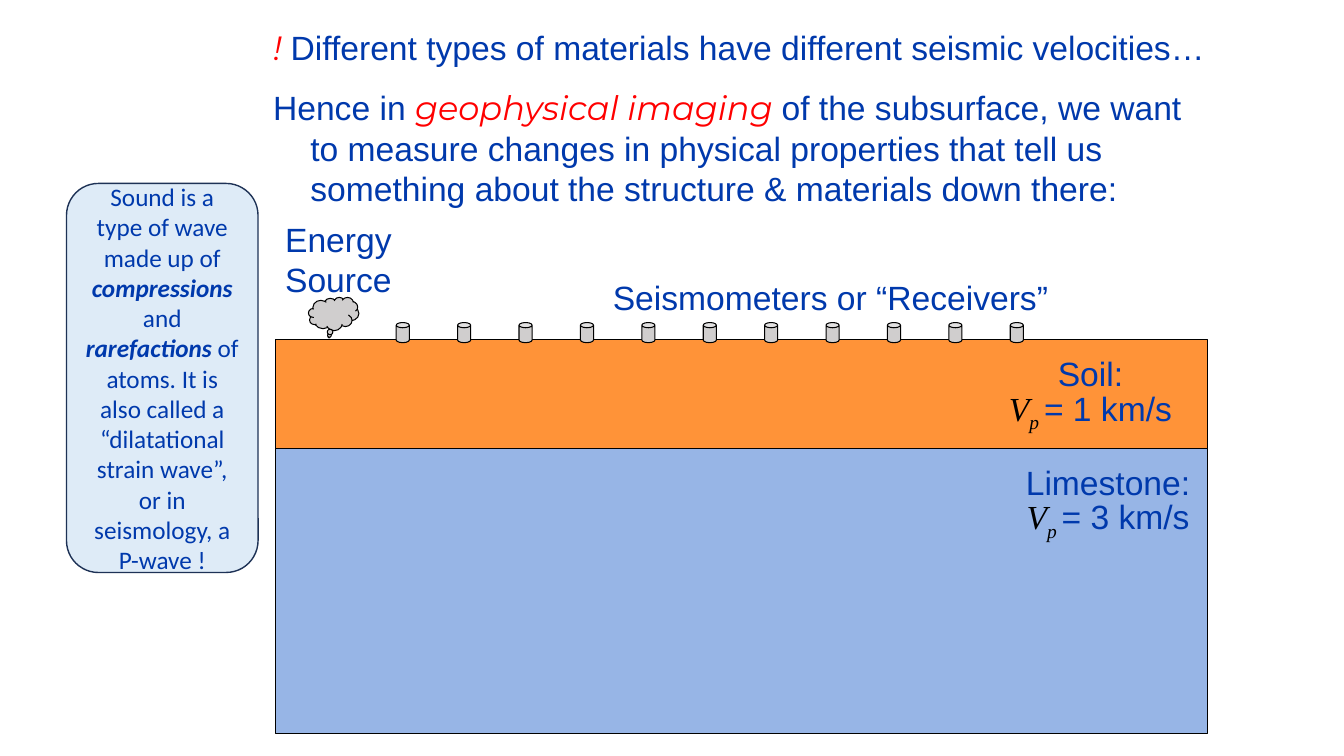
from pptx import Presentation
from pptx import util as u
from pptx.dml.color import RGBColor
from pptx.enum import shapes, text

NAVY = RGBColor(0x00, 0x39, 0xAC)
RED = RGBColor(0xFF, 0x00, 0x00)
BLACK = RGBColor(0x00, 0x00, 0x00)
ORANGE = RGBColor(0xFF, 0x93, 0x38)
BLUE = RGBColor(0x97, 0xB5, 0xE6)
GREY = RGBColor(0xD0, 0xCE, 0xCE)
PALE = RGBColor(0xDE, 0xEB, 0xF7)
EDGE = RGBColor(0x1E, 0x32, 0x56)

STYLES = {
    "plain": dict(name="Arial", size=24, color=NAVY),
    "stress": dict(name="Montserrat", size=24, color=RED, italic=True),
    "symbol": dict(name="Times New Roman", size=24, color=BLACK, italic=True),
    "sub": dict(name="Times New Roman", size=24, color=BLACK, italic=True, baseline=-25000),
    "note": dict(name="Calibri", size=18, color=NAVY),
    "term": dict(name="Calibri", size=18, color=NAVY, bold=True, italic=True),
}

INTRO = [
    [("! ", "stress"),
     ("Different types of materials have different seismic velocities…", "plain")],
    [("Hence in ", "plain"), ("geophysical imaging ", "stress"),
     ("of the subsurface, we want", "plain")],
    [("to measure changes in physical properties that tell us", "plain")],
    [("something about the structure & materials down there:", "plain")],
]
SOURCE = [[("Energy", "plain")], [("Source", "plain")]]
RECEIVERS = [[("Seismometers or “Receivers”", "plain")]]
NOTE = [[
    ("Sound is a type of wave made up of ", "note"), ("compressions", "term"),
    (" and ", "note"), ("rarefactions ", "term"),
    ("of atoms. It is also called a “dilatational strain wave”, "
     "or in seismology, a P-wave !", "note"),
]]
LAYERS = [
    ("Soil:", "= 1 km/s", ORANGE, 3.37, 1.08, (9.87, 3.45, 1.89, 0.91)),
    ("Limestone:", "= 3 km/s", BLUE, 4.45, 2.83, (10.02, 4.53, 1.94, 0.91)),
]
GROUND_LEFT, GROUND_WIDTH = 2.73, 9.25
CAN_COUNT, CAN_FIRST, CAN_LAST = 11, 3.93, 10.02
LINE_PITCH = 28.8
LEFT, CENTER = text.PP_ALIGN.LEFT, text.PP_ALIGN.CENTER
SHAPE = shapes.MSO_SHAPE


def write(frame, paragraphs, align=LEFT, pitch=None):
    for index, parts in enumerate(paragraphs):
        para = frame.paragraphs[0] if index == 0 else frame.add_paragraph()
        para.alignment = align
        if pitch:
            para.line_spacing = u.Pt(pitch)
        for words, style_name in parts:
            style = STYLES[style_name]
            span = para.add_run()
            span.text = words
            span.font.name = style["name"]
            span.font.size = u.Pt(style["size"])
            span.font.color.rgb = style["color"]
            span.font.bold = style.get("bold", False)
            span.font.italic = style.get("italic", False)
            if "baseline" in style:
                span.font._element.set("baseline", str(style["baseline"]))


def add_label(page, place, paragraphs, align=LEFT):
    box = page.shapes.add_textbox(*map(u.Inches, place))
    frame = box.text_frame
    frame.word_wrap = False
    frame.auto_size = text.MSO_AUTO_SIZE.SHAPE_TO_FIT_TEXT
    write(frame, paragraphs, align, LINE_PITCH)
    return frame


def add_figure(page, kind, place, fill, edge=BLACK, width=0.75, adjustments=()):
    figure = page.shapes.add_shape(kind, *map(u.Inches, place))
    figure.shadow.inherit = False
    figure.fill.solid()
    figure.fill.fore_color.rgb = fill
    figure.line.color.rgb = edge
    figure.line.width = u.Pt(width)
    for index, value in enumerate(adjustments):
        figure.adjustments[index] = value
    return figure


def main():
    deck = Presentation()
    deck.slide_width, deck.slide_height = u.Inches(13.33), u.Inches(7.5)
    page = deck.slides.add_slide(deck.slide_layouts[6])

    intro = add_label(page, (2.61, 0.22, 9.59, 1.92), INTRO)
    intro.paragraphs[1].space_before = u.Pt(14)
    for para in intro.paragraphs[2:]:
        para._p.get_or_add_pPr().set("marL", str(u.Inches(0.37)))

    for name, speed, fill, top, height, place in LAYERS:
        add_figure(page, SHAPE.RECTANGLE, (GROUND_LEFT, top, GROUND_WIDTH, height), fill)
        velocity = [("V", "symbol"), ("p ", "sub"), (speed, "plain")]
        add_label(page, place, [[(name, "plain")], velocity], CENTER)

    add_figure(page, SHAPE.CLOUD_CALLOUT, (3.06, 2.95, 0.5, 0.33), GREY,
               adjustments=(-0.09, 0.69))
    add_label(page, (2.73, 2.12, 1.27, 0.91), SOURCE)

    step = (CAN_LAST - CAN_FIRST) / (CAN_COUNT - 1)
    for index in range(CAN_COUNT):
        add_figure(page, SHAPE.CAN, (CAN_FIRST + index * step, 3.2, 0.13, 0.2), GREY,
                   adjustments=(0.4,))
    add_label(page, (5.98, 2.7, 4.68, 0.5), RECEIVERS)

    note = add_figure(page, SHAPE.ROUNDED_RECTANGLE, (0.66, 1.82, 1.9, 3.86), PALE, EDGE, 1)
    note.text_frame.word_wrap = True
    note.text_frame.vertical_anchor = text.MSO_ANCHOR.MIDDLE
    write(note.text_frame, NOTE, CENTER)

    deck.save("out.pptx")


if __name__ == "__main__":
    main()
